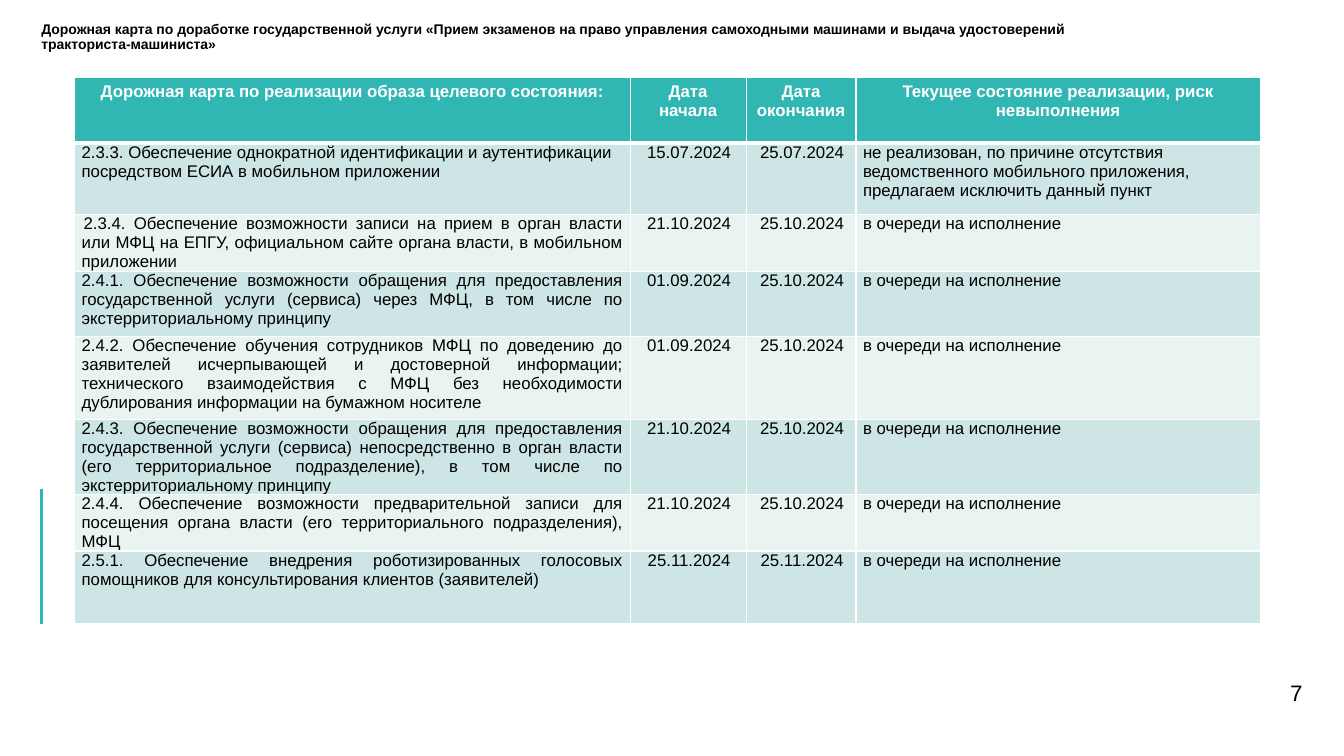
from lxml.etree import SubElement
from pptx import Presentation
from pptx.dml.color import RGBColor
from pptx.enum.shapes import MSO_CONNECTOR
from pptx.enum.text import MSO_ANCHOR, MSO_AUTO_SIZE, PP_ALIGN
from pptx.oxml import parse_xml
from pptx.oxml.ns import nsdecls, qn
from pptx.util import Inches, Pt

TEAL = RGBColor(0x30, 0xB6, 0xB3)
BAND_DARK = RGBColor(0xCD, 0xE5, 0xE5)
BAND_LIGHT = RGBColor(0xE8, 0xF3, 0xF2)
BLACK = RGBColor(0, 0, 0)
WHITE = RGBColor(0xFF, 0xFF, 0xFF)

TITLE = (
    "Дорожная карта по доработке государственной услуги «Прием экзаменов на право "
    "управления самоходными машинами и выдача удостоверений тракториста-машиниста»"
)
HEADINGS = [
    "Дорожная карта по реализации образа целевого состояния:",
    "Дата\nначала",
    "Дата окончания",
    "Текущее состояние реализации, риск невыполнения",
]
QUEUED = "в очереди на исполнение"
STAGES = [
    ("2.3.3. Обеспечение однократной идентификации и аутентификации посредством "
     "ЕСИА в мобильном приложении",
     "15.07.2024", "25.07.2024",
     "не реализован, по причине отсутствия ведомственного мобильного приложения, "
     "предлагаем исключить данный пункт"),
    ("2.3.4. Обеспечение возможности записи на прием в орган власти или МФЦ на ЕПГУ, "
     "официальном сайте органа власти, в мобильном приложении",
     "21.10.2024", "25.10.2024", QUEUED),
    ("2.4.1. Обеспечение возможности обращения для предоставления государственной "
     "услуги (сервиса) через МФЦ, в том числе по экстерриториальному принципу",
     "01.09.2024", "25.10.2024", QUEUED),
    ("2.4.2. Обеспечение обучения сотрудников МФЦ по доведению до заявителей "
     "исчерпывающей и достоверной информации; технического взаимодействия с МФЦ "
     "без необходимости дублирования информации на бумажном носителе",
     "01.09.2024", "25.10.2024", QUEUED),
    ("2.4.3. Обеспечение возможности обращения для предоставления государственной "
     "услуги (сервиса) непосредственно в орган власти (его территориальное "
     "подразделение), в том числе по экстерриториальному принципу",
     "21.10.2024", "25.10.2024", QUEUED),
    ("2.4.4. Обеспечение возможности предварительной записи для посещения органа "
     "власти (его территориального подразделения), МФЦ",
     "21.10.2024", "25.10.2024", QUEUED),
    ("2.5.1. Обеспечение внедрения роботизированных голосовых помощников для "
     "консультирования клиентов (заявителей)",
     "25.11.2024", "25.11.2024", QUEUED),
]
COLUMN_WIDTHS = [5.51, 1.15, 1.09, 4.01]
ROW_HEIGHTS = [0.65, 0.71, 0.47, 0.65, 0.82, 0.72, 0.5, 0.72]
STAGE_ALIGNS = [PP_ALIGN.JUSTIFY, PP_ALIGN.CENTER, PP_ALIGN.CENTER, PP_ALIGN.LEFT]


def write(frame, text, size=12, color=BLACK, bold=False, align=PP_ALIGN.LEFT,
          spacing=None, indent=0):
    """Fill a text frame, one paragraph per line of text."""
    frame.text = text
    for paragraph in frame.paragraphs:
        paragraph.alignment = align
        if spacing:
            paragraph.line_spacing = spacing
        if indent:
            paragraph._p.get_or_add_pPr().set("indent", str(Inches(indent)))
        font = paragraph.runs[0].font
        font.name, font.size, font.bold = "Arial", Pt(size), bold
        font.color.rgb = color


def prepare_frame(shape, anchor):
    frame = shape.text_frame
    frame.margin_left = frame.margin_right = frame.margin_top = frame.margin_bottom = 0
    frame.word_wrap = True
    frame.auto_size = MSO_AUTO_SIZE.NONE
    frame.vertical_anchor = anchor
    return frame


def place(shape, left, top, width, height):
    shape.left, shape.top = Inches(left), Inches(top)
    shape.width, shape.height = Inches(width), Inches(height)


def set_borders(cell, top=1, bottom=1):
    properties = cell._tc.get_or_add_tcPr()
    sides = {"lnL": 1, "lnR": 1, "lnT": top, "lnB": bottom}
    for position, (side, width) in enumerate(sides.items()):
        properties.insert(position, parse_xml(
            f'<a:{side} {nsdecls("a")} w="{Pt(width)}"><a:solidFill>'
            f'<a:srgbClr val="{WHITE}"/></a:solidFill></a:{side}>'))


def add_accent_line(slide, x, top, bottom):
    accent = slide.shapes.add_connector(
        MSO_CONNECTOR.STRAIGHT, Inches(x), Inches(top), Inches(x), Inches(bottom))
    accent.line.color.rgb = TEAL
    accent.line.width = Pt(2.25)
    SubElement(accent._element.spPr, qn("a:effectLst"))


def fill_cell(cell, color, **borders):
    cell.fill.solid()
    cell.fill.fore_color.rgb = color
    set_borders(cell, **borders)


def add_roadmap(slide):
    roadmap = slide.shapes.add_table(
        len(ROW_HEIGHTS), len(COLUMN_WIDTHS), Inches(0.74), Inches(0.77),
        Inches(sum(COLUMN_WIDTHS)), Inches(sum(ROW_HEIGHTS))).table
    for column, width in zip(roadmap.columns, COLUMN_WIDTHS):
        column.width = Inches(width)
    for row, height in zip(roadmap.rows, ROW_HEIGHTS):
        row.height = Inches(height)

    # Header row
    for column, heading in enumerate(HEADINGS):
        cell = roadmap.cell(0, column)
        write(cell.text_frame, heading, color=WHITE, bold=True, align=PP_ALIGN.CENTER)
        fill_cell(cell, TEAL, bottom=3)

    # Banded stage rows
    for row, stage in enumerate(STAGES, start=1):
        for column, text in enumerate(stage):
            cell = roadmap.cell(row, column)
            cell.margin_left = cell.margin_right = Inches(0.07)
            cell.margin_top = cell.margin_bottom = 0
            align = PP_ALIGN.LEFT if row == 1 and column == 0 else STAGE_ALIGNS[column]
            indented = column in (1, 2) or (row == 2 and column == 0)
            write(cell.text_frame, text, align=align, indent=0.02 if indented else 0)
            fill_cell(cell, BAND_DARK if row % 2 else BAND_LIGHT,
                      top=3 if row == 1 else 1)


def main():
    deck = Presentation()
    deck.slide_width, deck.slide_height = Inches(13.33), Inches(7.5)
    slide = deck.slides.add_slide(deck.slide_layouts[5])

    # Title
    title = slide.shapes.title
    place(title, 0.41, 0.22, 11.05, 0.39)
    write(prepare_frame(title, MSO_ANCHOR.TOP), TITLE, size=10, bold=True, spacing=0.9)

    # Page number
    page_number = slide.shapes.add_textbox(
        Inches(11.86), Inches(6.66), Inches(1.06), Inches(0.43))
    write(prepare_frame(page_number, MSO_ANCHOR.MIDDLE), "7", size=16,
          align=PP_ALIGN.RIGHT)

    # Accent line and table
    add_accent_line(slide, 0.41, 4.85, 6.19)
    add_roadmap(slide)

    deck.save("out.pptx")


if __name__ == "__main__":
    main()
